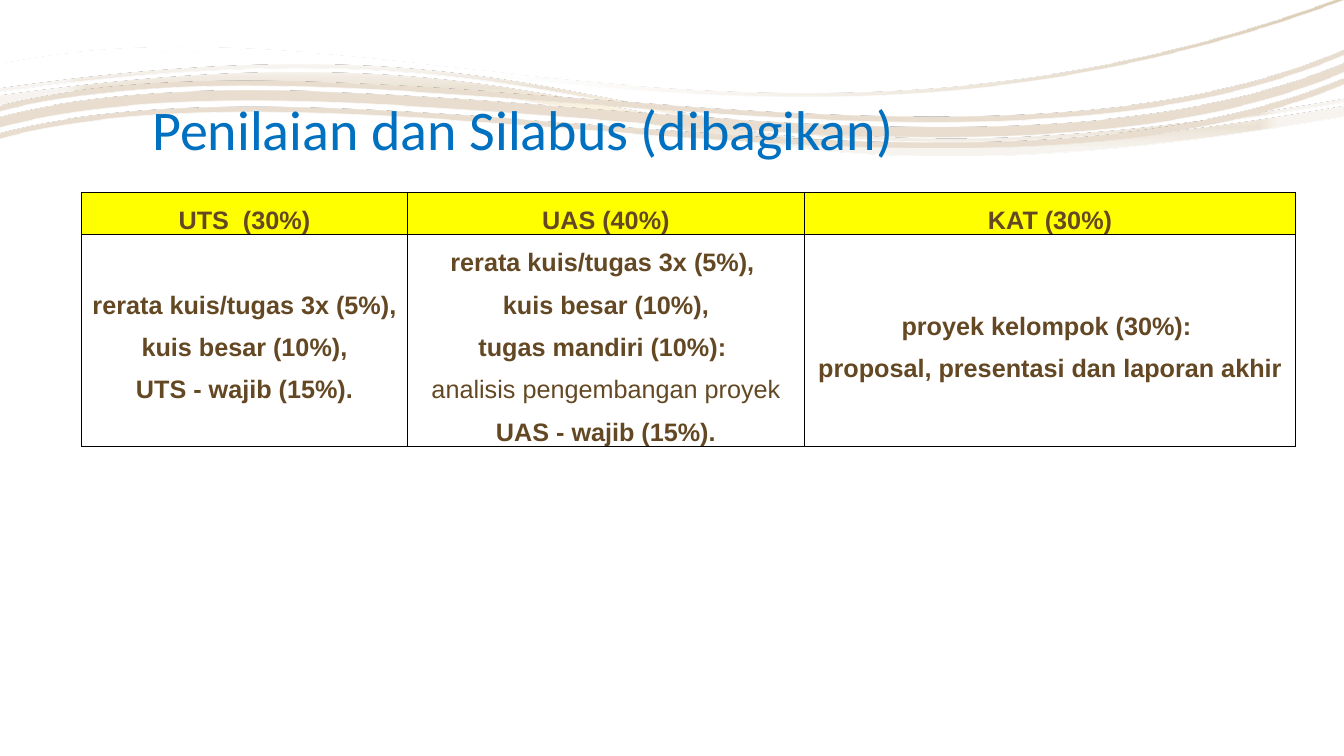
import math

import pptx
import pptx.dml.color
import pptx.enum.text
import pptx.oxml
import pptx.oxml.ns
import pptx.util

SLIDE_W, SLIDE_H = 13.33, 7.5
COLORS = {
    "title": "0070C0", "text": "634823", "header": "FFFF00", "border": "000000",
    "cream": "FAF1DF", "sand": "EAE0D2", "mist": "F7F4EF",
    "white": "FFFFFF", "gold": "CBB491", "tan": "E8DDCE",
}
NS = 'xmlns:a="http://schemas.openxmlformats.org/drawingml/2006/main"'
UNITS_PER_INCH = 10000
TILT = -3.5

WAVES = [
    {
        "box": (0.01, 0.39, 13.31, 1.35),
        "bands": [
            [(3.06, 0.72), (6.7, 0.74, 7.38, 2.09, 13.33, 1.05), (13.33, 1.15),
             (6.02, 2.43, 6.67, 0.1, 0, 1.05), (0, 0.95), (1.24, 0.78, 2.22, 0.71, 3.06, 0.72)],
            [(3.06, 0.64), (6.7, 0.67, 7.38, 2.02, 13.33, 0.98), (13.33, 1.01),
             (6.02, 2.29, 6.67, -0.04, 0, 0.91), (0, 0.88), (1.24, 0.7, 2.22, 0.64, 3.06, 0.64)],
        ],
        "stops": [(0, "cream", 90), (18, "sand", 90), (37, "mist", 90), (100, "mist", 90)],
        "direction": '<a:path path="shape"><a:fillToRect l="50000" t="50000" r="50000" b="50000"/></a:path>',
    },
    {
        "box": (0.03, 0.15, 13.35, 1.71),
        "bands": [
            [(13.33, -0.03), (13.33, 0), (7.54, 2.15, 3.73, -0.1, 0, 0.68), (0, 0.64),
             (3.73, -0.14, 7.54, 2.11, 13.33, -0.03)],
        ],
        "stops": [(36, "white", 30), (100, "gold", 100)],
        "direction": '<a:lin ang="2700000" scaled="0"/>',
    },
    {
        "box": (-0.01, 0.51, 13.36, 1.15),
        "bands": [
            [(13.33, 0.77), (13.33, 0.83), (9.55, 2.41, 3.49, 0.43, 0, 1.37), (0, 1.32),
             (3.49, 0.38, 9.55, 2.35, 13.33, 0.77)],
            [(13.33, 0.62), (13.33, 0.71), (9.55, 2.3, 3.49, 0.32, 0, 1.26), (0, 1.16),
             (3.49, 0.22, 9.55, 2.2, 13.33, 0.62)],
            [(13.33, 0.49), (13.33, 0.54), (9.58, 2.16, 3.51, 0.19, 0, 1.1), (0, 1.05),
             (3.51, 0.14, 9.58, 2.11, 13.33, 0.49)],
        ],
        "stops": [(36, "white", 47), (100, "tan", 100)],
        "direction": '<a:path path="rect"><a:fillToRect l="100000" t="100000"/></a:path>',
    },
]

ASSESSMENTS = [
    ("UTS  (30%)", ["rerata kuis/tugas 3x (5%),", "kuis besar (10%),", "UTS - wajib (15%)."]),
    ("UAS (40%)", ["rerata kuis/tugas 3x (5%), ", "kuis besar (10%),", "tugas mandiri (10%): ",
                   "analisis pengembangan proyek", "UAS - wajib (15%)."]),
    ("KAT (30%)", ["proyek kelompok (30%): ", "proposal, presentasi dan laporan akhir"]),
]
PLAIN_LINES = {"analisis pengembangan proyek"}
COLUMN_WIDTHS = [3.23, 3.94, 4.87]
ROW_HEIGHTS = [0.42, 2.09]


def rgb(name):
    """Return the named colour."""
    return pptx.dml.color.RGBColor.from_string(COLORS[name])


def write_text(paragraph, text, size=18, font="Arial", color="text", bold=False,
               align=pptx.enum.text.PP_ALIGN.CENTER, spacing=1.5):
    """Write one formatted run into a paragraph."""
    paragraph.alignment = align
    paragraph.line_spacing = spacing
    run = paragraph.add_run()
    run.text = text
    run.font.size = pptx.util.Pt(size)
    run.font.name = font
    run.font.bold = bold
    run.font.color.rgb = rgb(color)


def local_point(x, y, box):
    """Turn a slide point into a point element of the tilted box."""
    left, top, width, height = box
    angle = math.radians(-TILT)
    dx, dy = x - left - width / 2, y - top - height / 2
    across = width / 2 + dx * math.cos(angle) - dy * math.sin(angle)
    down = height / 2 + dx * math.sin(angle) + dy * math.cos(angle)
    return f'<a:pt x="{round(across * UNITS_PER_INCH)}" y="{round(down * UNITS_PER_INCH)}"/>'


def band_commands(band, box):
    """Return the drawing commands of one closed band."""
    commands = []
    for index, segment in enumerate(band):
        points = "".join(local_point(x, y, box) for x, y in zip(segment[::2], segment[1::2]))
        tag = "moveTo" if index == 0 else "lnTo" if len(segment) == 2 else "cubicBezTo"
        commands.append(f"<a:{tag}>{points}</a:{tag}>")
    return "".join(commands) + "<a:close/>"


def gradient_fill(stops, direction):
    """Return a gradient with transparent stops."""
    stop_xml = "".join(
        f'<a:gs pos="{position * 1000}"><a:srgbClr val="{COLORS[color]}">'
        f'<a:alpha val="{alpha * 1000}"/></a:srgbClr></a:gs>'
        for position, color, alpha in stops)
    return pptx.oxml.parse_xml(
        f'<a:gradFill {NS} rotWithShape="1"><a:gsLst>{stop_xml}</a:gsLst>{direction}</a:gradFill>')


def add_wave(slide, box, bands, stops, direction):
    """Draw one set of curved bands in its tilted box."""
    left, top, width, height = box
    across, down = round(width * UNITS_PER_INCH), round(height * UNITS_PER_INCH)
    builder = slide.shapes.build_freeform(0, 0, scale=pptx.util.Inches(1) / UNITS_PER_INCH)
    builder.add_line_segments([(across, 0), (across, down), (0, down)], close=True)
    ribbon = builder.convert_to_shape(pptx.util.Inches(left), pptx.util.Inches(top))
    ribbon.rotation = TILT
    ribbon.shadow.inherit = False
    ribbon.line.fill.background()
    outline = ribbon._element.spPr.find(pptx.oxml.ns.qn("a:custGeom"))
    frame_path = outline.find(".//" + pptx.oxml.ns.qn("a:path"))
    commands = "".join(band_commands(band, box) for band in bands)
    curves = pptx.oxml.parse_xml(f'<a:path {NS} w="{across}" h="{down}">{commands}</a:path>')
    frame_path.getparent().replace(frame_path, curves)
    outline.addnext(gradient_fill(stops, direction))


def add_title(slide, left, top, width, height):
    """Place the title in its box, in front of the waves."""
    title = slide.shapes.title
    title.left, title.top, title.width, title.height = map(
        pptx.util.Inches, (left, top, width, height))
    frame = title.text_frame
    frame.word_wrap = True
    frame.auto_size = pptx.enum.text.MSO_AUTO_SIZE.NONE
    frame.vertical_anchor = pptx.enum.text.MSO_ANCHOR.BOTTOM
    write_text(frame.paragraphs[0], "Penilaian dan Silabus (dibagikan)", size=40, font="Calibri",
               color="title", align=pptx.enum.text.PP_ALIGN.LEFT, spacing=0.9)
    slide.shapes._spTree.append(title._element)


def format_cell(cell, lines, header):
    """Fill one table cell with its lines, borders and background."""
    cell.margin_left = cell.margin_right = pptx.util.Inches(0.07)
    cell.margin_top = cell.margin_bottom = 0
    cell.vertical_anchor = pptx.enum.text.MSO_ANCHOR.MIDDLE
    frame = cell.text_frame
    for index, line in enumerate(lines):
        paragraph = frame.add_paragraph() if index else frame.paragraphs[0]
        write_text(paragraph, line, bold=line not in PLAIN_LINES)
    properties = cell._tc.get_or_add_tcPr()
    for side in ("lnL", "lnR", "lnT", "lnB"):
        properties.append(pptx.oxml.parse_xml(
            f'<a:{side} {NS} w="12700"><a:solidFill><a:srgbClr val="{COLORS["border"]}"/>'
            f'</a:solidFill></a:{side}>'))
    if header:
        cell.fill.solid()
        cell.fill.fore_color.rgb = rgb("header")
    else:
        cell.fill.background()


def add_assessment_table(slide, left, top):
    """Place the table of assessment weights at the given corner."""
    table = slide.shapes.add_table(
        len(ROW_HEIGHTS), len(ASSESSMENTS), pptx.util.Inches(left), pptx.util.Inches(top),
        pptx.util.Inches(sum(COLUMN_WIDTHS)), pptx.util.Inches(sum(ROW_HEIGHTS))).table
    table.first_row = table.horz_banding = False
    for row, height in zip(table.rows, ROW_HEIGHTS):
        row.height = pptx.util.Inches(height)
    for column, (heading, parts) in enumerate(ASSESSMENTS):
        table.columns[column].width = pptx.util.Inches(COLUMN_WIDTHS[column])
        format_cell(table.cell(0, column), [heading], header=True)
        format_cell(table.cell(1, column), parts, header=False)


def main():
    """Build the slide and save it."""
    deck = pptx.Presentation()
    deck.slide_width = pptx.util.Inches(SLIDE_W)
    deck.slide_height = pptx.util.Inches(SLIDE_H)
    slide = deck.slides.add_slide(deck.slide_layouts[5])
    slide.background.fill.solid()
    slide.background.fill.fore_color.rgb = rgb("white")
    for wave in WAVES:
        add_wave(slide, **wave)
    add_title(slide, 1.41, 0.33, 10.5, 1.33)
    add_assessment_table(slide, 0.81, 1.91)
    deck.save("out.pptx")


if __name__ == "__main__":
    main()
